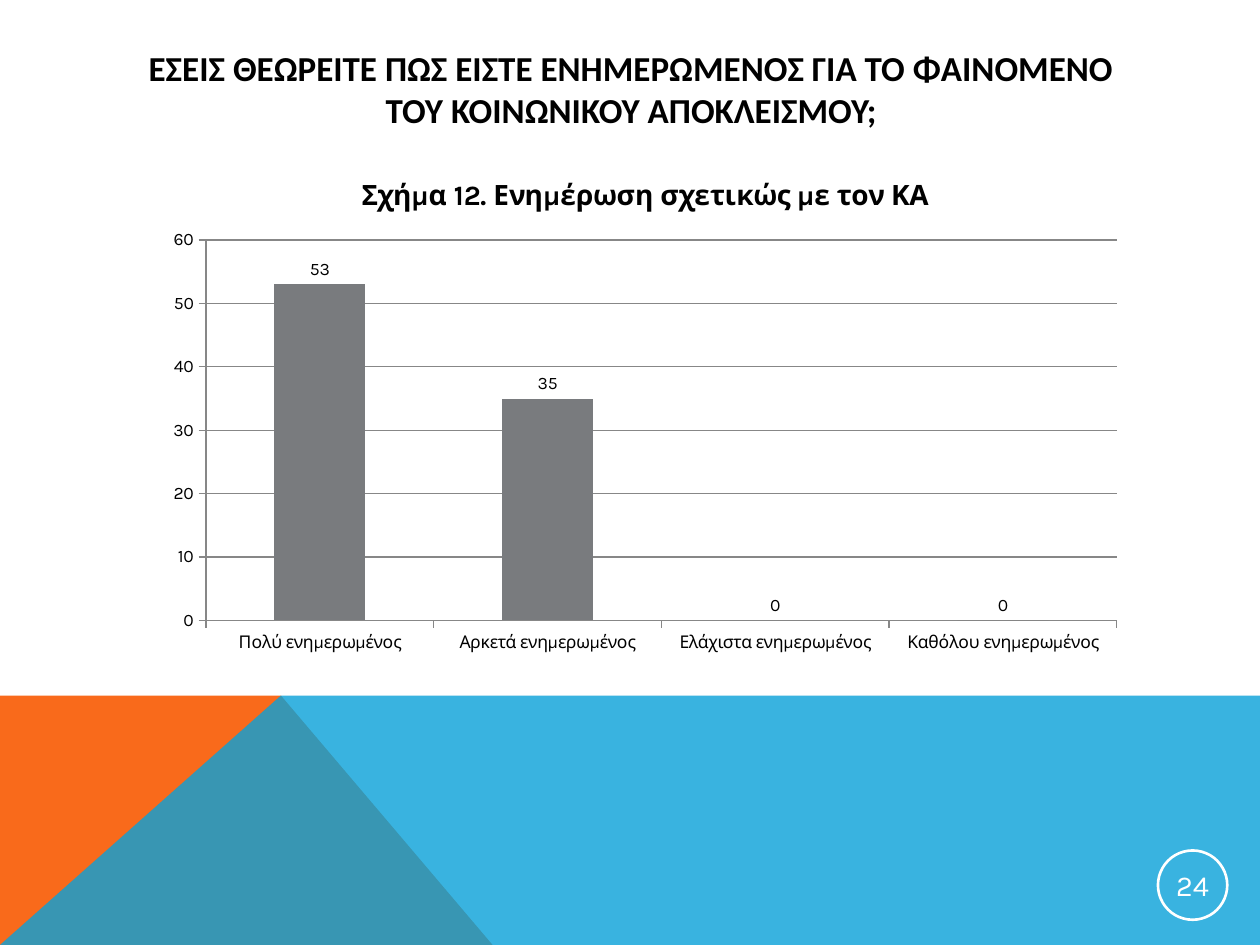
from pptx import Presentation
from pptx.chart.data import CategoryChartData
from pptx.dml.color import RGBColor
from pptx.enum.chart import XL_CHART_TYPE, XL_LABEL_POSITION, XL_TICK_MARK
from pptx.enum.shapes import MSO_SHAPE
from pptx.enum.text import MSO_ANCHOR, MSO_AUTO_SIZE, PP_ALIGN
from pptx.oxml.xmlchemy import OxmlElement
from pptx.util import Inches, Pt


class Theme:
    black = RGBColor.from_string("000000")
    white = RGBColor.from_string("FFFFFF")
    orange = RGBColor.from_string("F96A1B")
    blue = RGBColor.from_string("08A1D9")
    bar = RGBColor.from_string("797B7E")
    grid = RGBColor.from_string("878787")
    head = "Calibri"
    body = "Karla"
    title = Pt(20)
    name = Pt(16)
    label = Pt(10)
    page = Pt(16.5)


def write(frame, text, font, size, color, bold=False):
    para = frame.paragraphs[0]
    para.alignment = PP_ALIGN.CENTER
    run = para.add_run()
    run.text = text
    run.font.name = font
    run.font.size = size
    run.font.bold = bold
    run.font.color.rgb = color


def band(points, color):
    spots = [(Inches(x), Inches(y)) for x, y in points]
    form = slide.shapes.build_freeform(*spots[0], scale=1.0)
    form.add_line_segments(spots[1:], close=True)
    shape = form.convert_to_shape()
    shape.shadow.inherit = False
    shape.fill.solid()
    shape.fill.fore_color.rgb = color
    shape.line.fill.background()
    return shape


deck = Presentation()
deck.slide_width = Inches(10)
deck.slide_height = Inches(7.5)
slide = deck.slides.add_slide(deck.slide_layouts[5])

band([(0, 7.5), (0, 5.52), (2.23, 5.52), (3.91, 7.5)], Theme.orange)
sea = band([(0, 7.5), (2.23, 5.52), (10, 5.52), (10, 7.5)], Theme.blue)
alpha = OxmlElement("a:alpha")
alpha.set("val", "80000")
sea.fill._xPr.find(".//{*}solidFill/{*}srgbClr").append(alpha)

title = slide.shapes.title
title.left, title.top = Inches(0.9), Inches(0.4)
title.width, title.height = Inches(8.22), Inches(0.6)
frame = title.text_frame
frame.word_wrap = True
frame.auto_size = MSO_AUTO_SIZE.NONE
frame.vertical_anchor = MSO_ANCHOR.MIDDLE
write(frame, "ΕΣΕΙΣ ΘΕΩΡΕΙΤΕ ΠΩΣ ΕΙΣΤΕ ΕΝΗΜΕΡΩΜΕΝΟΣ ΓΙΑ ΤΟ ΦΑΙΝΟΜΕΝΟ ΤΟΥ ΚΟΙΝΩΝΙΚΟΥ ΑΠΟΚΛΕΙΣΜΟΥ;",
      Theme.head, Theme.title, Theme.black, True)

badge = slide.shapes.add_shape(
    MSO_SHAPE.OVAL, Inches(9.19), Inches(6.75), Inches(0.55), Inches(0.55))
badge.shadow.inherit = False
badge.fill.background()
badge.line.color.rgb = Theme.white
badge.line.width = Pt(1.5)
frame = badge.text_frame
frame.margin_left = frame.margin_right = Inches(0.01)
frame.margin_top = frame.margin_bottom = Inches(0.01)
frame.word_wrap = False
frame.vertical_anchor = MSO_ANCHOR.MIDDLE
write(frame, "24", Theme.body, Theme.page, Theme.white)

data = CategoryChartData()
data.categories = [f"{level} ενημερωμένος"
                   for level in ("Πολύ", "Αρκετά", "Ελάχιστα", "Καθόλου")]
data.add_series("Series 1", (53, 35, 0, 0))
chart = slide.shapes.add_chart(
    XL_CHART_TYPE.COLUMN_CLUSTERED, Inches(1.22), Inches(1.23),
    Inches(7.8), Inches(4.03), data).chart
chart.font.name = Theme.body
chart.font.size = Theme.label
chart.font.color.rgb = Theme.black
chart.has_legend = False
chart.has_title = True
write(chart.chart_title.text_frame, "Σχήμα 12. Ενημέρωση σχετικώς με τον ΚΑ",
      Theme.body, Theme.name, Theme.black, True)
chart.chart_title.include_in_layout = False

for axis in (chart.category_axis, chart.value_axis):
    axis.major_tick_mark = XL_TICK_MARK.OUTSIDE
    axis.minor_tick_mark = XL_TICK_MARK.NONE
    axis.format.line.color.rgb = Theme.grid
axis = chart.value_axis
axis.minimum_scale = 0
axis.maximum_scale = 60
axis.major_unit = 10
axis.has_major_gridlines = True
axis.major_gridlines.format.line.color.rgb = Theme.grid

plot = chart.plots[0]
plot.gap_width = 150
plot.vary_by_categories = False
bars = plot.series[0]
bars.format.fill.solid()
bars.format.fill.fore_color.rgb = Theme.bar
labels = bars.data_labels
labels.show_value = True
labels.position = XL_LABEL_POSITION.OUTSIDE_END

deck.save("out.pptx")
